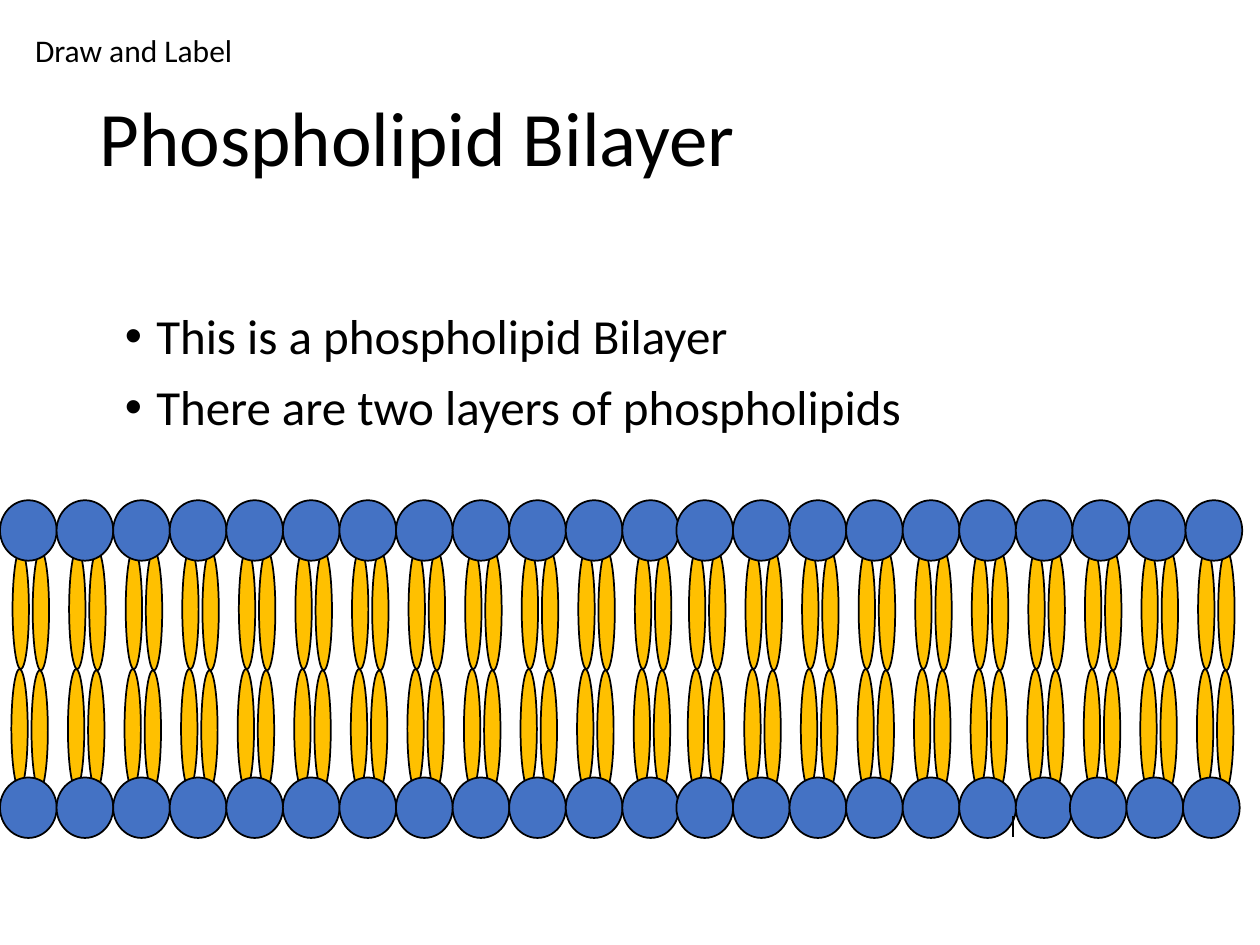
from dataclasses import dataclass

from lxml import etree
from pptx import Presentation
from pptx import util as u
from pptx.dml import color
from pptx.enum import shapes, text
from pptx.oxml import ns


@dataclass(frozen=True)
class Theme:
    font: str = "Calibri"
    ink: str = "000000"
    head: str = "4472C4"
    tail: str = "FFC000"
    title_size: int = 44
    body_size: int = 28
    label_size: int = 18
    outline: int = 1


THEME = Theme()
COLUMNS = 22
PITCH = 0.449
SEAM_COLUMN = 12
SEAM_OVERLAP = 0.02
LOWER_SEAM_COLUMN = 19
HEAD_WIDTH, HEAD_HEIGHT = 0.45, 0.48
TAIL_WIDTH, TAIL_HEIGHT = 0.13, 0.95


def rgb(value):
    return color.RGBColor.from_string(value)


def place(shape, box):
    shape.left, shape.top, shape.width, shape.height = map(u.Inches, box)


def add_span(para, words, size):
    span = para.add_run()
    span.text = words
    span.font.name = THEME.font
    span.font.size = u.Pt(size)
    span.font.color.rgb = rgb(THEME.ink)


def write_title(page, box, words):
    title = page.shapes.title
    place(title, box)
    frame = title.text_frame
    frame.auto_size = text.MSO_AUTO_SIZE.NONE
    frame.vertical_anchor = text.MSO_ANCHOR.MIDDLE
    para = frame.paragraphs[0]
    para.alignment = text.PP_ALIGN.LEFT
    para.line_spacing = 0.9
    add_span(para, words, THEME.title_size)


def write_bullets(page, box, lines):
    body = page.placeholders[1]
    place(body, box)
    frame = body.text_frame
    frame.auto_size = text.MSO_AUTO_SIZE.NONE
    for index, words in enumerate(lines):
        para = frame.add_paragraph() if index else frame.paragraphs[0]
        para.line_spacing = 0.9
        para.space_before = u.Pt(10)
        properties = para._p.get_or_add_pPr()
        properties.set("marL", str(u.Inches(0.25)))
        properties.set("indent", str(u.Inches(-0.25)))
        add_span(para, words, THEME.body_size)


def write_label(page, box, words):
    label = page.shapes.add_textbox(*map(u.Inches, box))
    label.text_frame.word_wrap = True
    add_span(label.text_frame.paragraphs[0], words, THEME.label_size)


def add_ellipse(page, box, fill, rotation):
    ellipse = page.shapes.add_shape(shapes.MSO_SHAPE.OVAL, *map(u.Inches, box))
    ellipse.shadow.inherit = False
    ellipse.rotation = rotation
    ellipse.fill.solid()
    ellipse.fill.fore_color.rgb = rgb(fill)
    ellipse.line.color.rgb = rgb(THEME.ink)
    ellipse.line.width = u.Pt(THEME.outline)


def draw_phospholipid(page, head_at, tails_at, rotation=0):
    for left, top in tails_at:
        add_ellipse(page, (left, top, TAIL_WIDTH, TAIL_HEIGHT), THEME.tail, rotation)
    add_ellipse(page, (*head_at, HEAD_WIDTH, HEAD_HEIGHT), THEME.head, rotation)


def draw_bilayer(page, box):
    left, top, width, height = box
    middle = top + height / 2
    lower_head_top = top + height - HEAD_HEIGHT
    for column in range(COLUMNS):
        x = left + column * PITCH
        if column >= SEAM_COLUMN:
            x -= SEAM_OVERLAP
        lower_x = x - SEAM_OVERLAP if column >= LOWER_SEAM_COLUMN else x
        draw_phospholipid(
            page, (x, top),
            [(x + 0.1, middle - TAIL_HEIGHT), (x + 0.26, middle - TAIL_HEIGHT + 0.01)],
        )
        draw_phospholipid(
            page, (lower_x, lower_head_top),
            [(x + 0.25, middle + 0.01), (x + 0.09, middle)],
            rotation=180,
        )


def draw_tick(page, x, bottom, top):
    tick = page.shapes.add_connector(
        shapes.MSO_CONNECTOR.STRAIGHT, *map(u.Inches, (x, bottom, x, top))
    )
    tick.line.color.rgb = rgb(THEME.ink)
    tick.line.width = u.Pt(THEME.outline)
    etree.SubElement(tick._element.spPr, ns.qn("a:effectLst"))


def main():
    deck = Presentation()
    deck.slide_width, deck.slide_height = u.Inches(10), u.Inches(7.5)
    page = deck.slides.add_slide(deck.slide_layouts[1])
    write_title(page, (0.69, 0.4, 8.62, 1.45), "Phospholipid Bilayer")
    write_bullets(
        page, (0.89, 2.43, 8.23, 1.43),
        ["This is a phospholipid Bilayer", "There are two layers of phospholipids"],
    )
    draw_bilayer(page, (0, 3.97, 9.86, 2.68))
    draw_tick(page, 8.04, 6.64, 6.48)
    write_label(page, (0.18, 0.2, 3.33, 0.4), "Draw and Label")
    deck.save("out.pptx")


if __name__ == "__main__":
    main()
